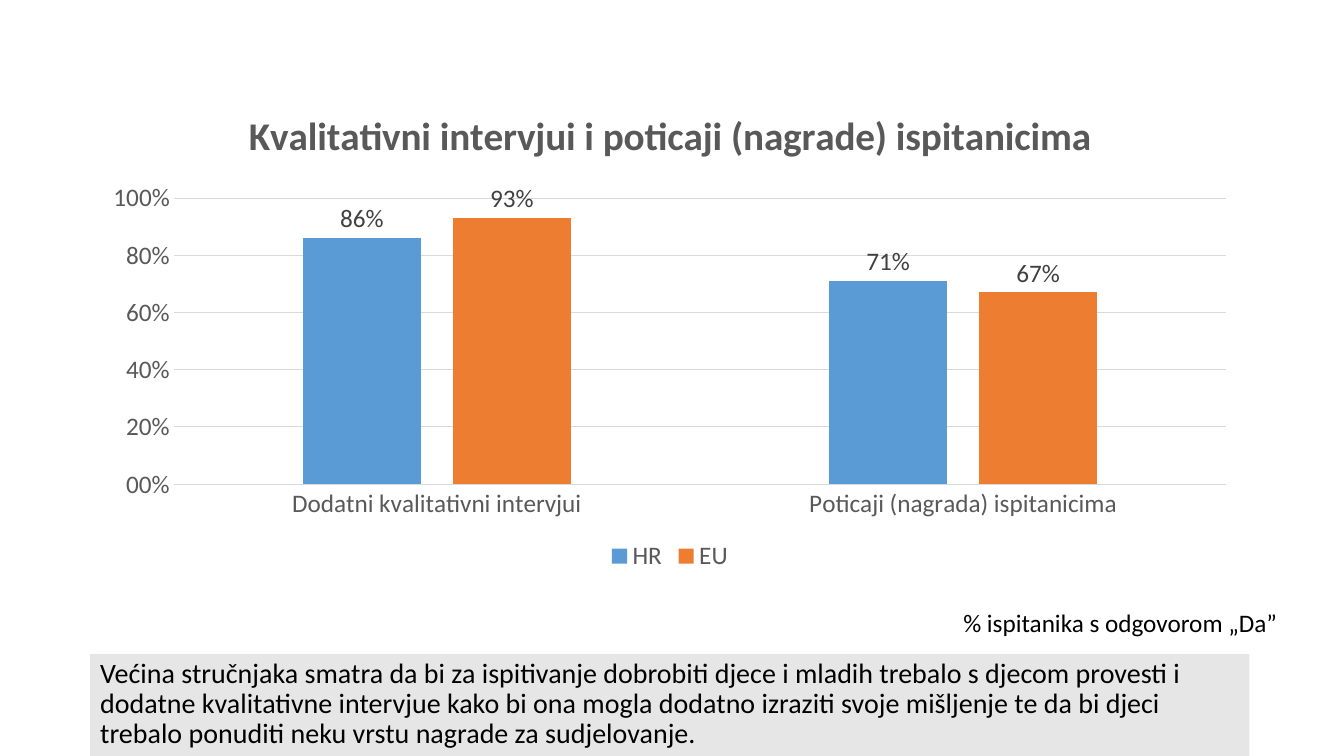
from dataclasses import dataclass

from pptx import Presentation
from pptx import util as u
from pptx.chart import data as chart_data
from pptx.dml.color import RGBColor
from pptx.enum import chart as chart_enums

EMU_PER_PX = 9525
FONT = "Calibri"
PERCENT = "0,0%"
COLORS = {
    "black": "000000",
    "panel": "E7E6E6",
    "axis": "595959",
    "label": "404040",
    "grid": "D9D9D9",
    "hr": "5B9BD5",
    "eu": "ED7D31",
}


@dataclass(frozen=True)
class Box:
    left: int
    top: int
    width: int
    height: int

    def emu(self) -> tuple:
        return tuple(
            u.Emu(side * EMU_PER_PX)
            for side in (self.left, self.top, self.width, self.height)
        )


@dataclass(frozen=True)
class Series:
    name: str
    values: tuple
    color: str


CATEGORIES = ("Dodatni kvalitativni intervjui", "Poticaji (nagrada) ispitanicima")
SERIES = (
    Series("HR", (0.86, 0.71), "hr"),
    Series("EU", (0.93, 0.67), "eu"),
)


def rgb(color: str) -> RGBColor:
    return RGBColor.from_string(COLORS[color])


def format_font(font, size: int = 18, color: str = "black", bold: bool = False) -> None:
    font.name = FONT
    font.size = u.Pt(size)
    font.bold = bold
    font.color.rgb = rgb(color)


def format_line(line, color: str) -> None:
    line.color.rgb = rgb(color)
    line.width = u.Pt(0.75)


def add_text(slide, box: Box, content: str, *, size: int = 18,
             fill: str = "", line_spacing: float = 1.0) -> None:
    shape = slide.shapes.add_textbox(*box.emu())
    if fill:
        shape.fill.solid()
        shape.fill.fore_color.rgb = rgb(fill)
    frame = shape.text_frame
    frame.word_wrap = True
    paragraph = frame.paragraphs[0]
    paragraph.line_spacing = line_spacing
    run = paragraph.add_run()
    run.text = content
    format_font(run.font, size)


def format_axes(chart) -> None:
    for axis in (chart.category_axis, chart.value_axis):
        axis.major_tick_mark = chart_enums.XL_TICK_MARK.NONE
        axis.minor_tick_mark = chart_enums.XL_TICK_MARK.NONE
        format_font(axis.tick_labels.font, color="axis")
    format_line(chart.category_axis.format.line, "grid")
    value_axis = chart.value_axis
    value_axis.minimum_scale = 0
    value_axis.maximum_scale = 1
    value_axis.major_unit = 0.2
    value_axis.format.line.fill.background()
    value_axis.has_major_gridlines = True
    format_line(value_axis.major_gridlines.format.line, "grid")
    value_axis.tick_labels.number_format = PERCENT
    value_axis.tick_labels.number_format_is_linked = False


def format_series(series, color: str) -> None:
    series.format.fill.solid()
    series.format.fill.fore_color.rgb = rgb(color)
    series.invert_if_negative = False
    labels = series.data_labels
    labels.show_value = True
    labels.position = chart_enums.XL_LABEL_POSITION.OUTSIDE_END
    labels.number_format = PERCENT
    labels.number_format_is_linked = False
    format_font(labels.font, color="label")


def add_column_chart(slide, box: Box, title: str) -> None:
    data = chart_data.CategoryChartData(number_format=PERCENT)
    data.categories = CATEGORIES
    for item in SERIES:
        data.add_series(item.name, item.values)
    chart = slide.shapes.add_chart(
        chart_enums.XL_CHART_TYPE.COLUMN_CLUSTERED, *box.emu(), data
    ).chart
    format_font(chart.font)

    chart.has_title = True
    chart.chart_title.include_in_layout = False
    run = chart.chart_title.text_frame.paragraphs[0].add_run()
    run.text = title
    format_font(run.font, 28, "axis", bold=True)

    chart.has_legend = True
    chart.legend.position = chart_enums.XL_LEGEND_POSITION.BOTTOM
    chart.legend.include_in_layout = False
    format_font(chart.legend.font, color="axis")

    format_axes(chart)
    plot = chart.plots[0]
    plot.gap_width = 219
    plot.overlap = -27
    plot.vary_by_categories = False
    for series, item in zip(plot.series, SERIES):
        format_series(series, item.color)


def main() -> None:
    presentation = Presentation()
    presentation.slide_width = u.Emu(1280 * EMU_PER_PX)
    presentation.slide_height = u.Emu(720 * EMU_PER_PX)
    slide = presentation.slides.add_slide(presentation.slide_layouts[6])
    add_text(
        slide, Box(86, 623, 1104, 97),
        "Većina stručnjaka smatra da bi za ispitivanje dobrobiti djece i mladih "
        "trebalo s djecom provesti i dodatne kvalitativne intervjue kako bi ona "
        "mogla dodatno izraziti svoje mišljenje te da bi djeci trebalo ponuditi "
        "neku vrstu nagrade za sudjelovanje.",
        size=20, fill="panel", line_spacing=0.9,
    )
    add_column_chart(
        slide, Box(86, 83, 1104, 466),
        "Kvalitativni intervjui i poticaji (nagrade) ispitanicima",
    )
    add_text(slide, Box(908, 574, 372, 38), "% ispitanika s odgovorom „Da”")
    presentation.save("out.pptx")


if __name__ == "__main__":
    main()
